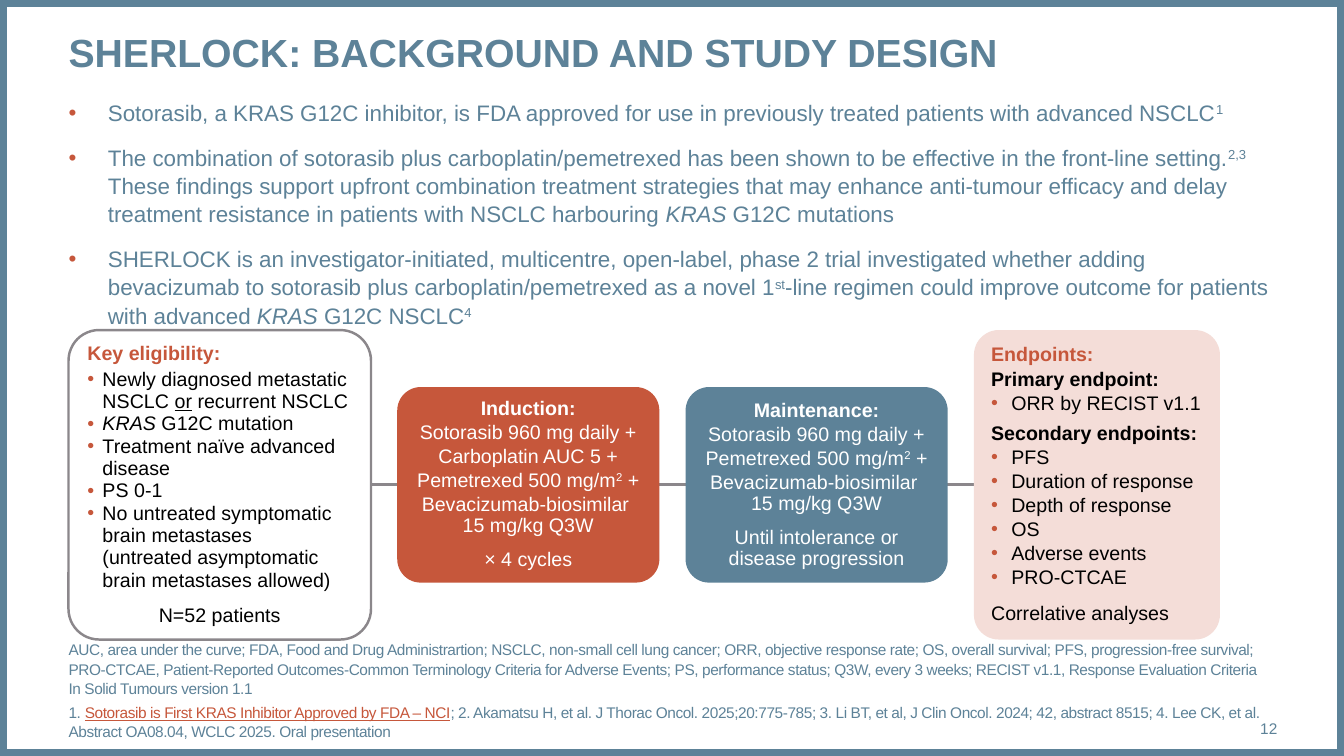
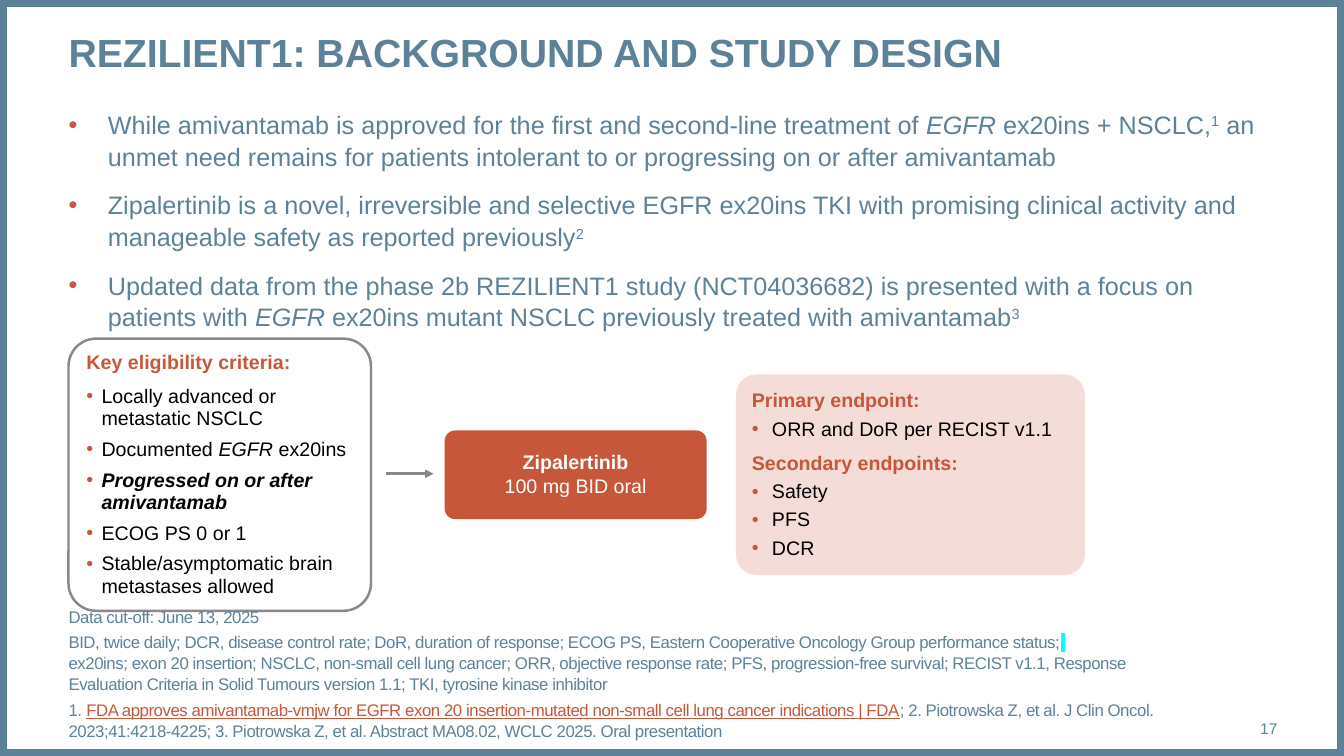
from dataclasses import dataclass, replace

from lxml.etree import SubElement
from pptx import Presentation
from pptx.dml.color import RGBColor
from pptx.enum.shapes import MSO_CONNECTOR, MSO_SHAPE
from pptx.enum.text import MSO_ANCHOR, MSO_AUTO_SIZE, PP_ALIGN
from pptx.oxml.ns import qn
from pptx.util import Inches, Pt


# Theme: colours, type sizes and common measures
@dataclass(frozen=True)
class Theme:
    font: str = "Arial"
    blue: str = "5D8298"
    rust: str = "C6573B"
    blush: str = "F4DDD8"
    grey: str = "8B878B"
    black: str = "000000"
    white: str = "FFFFFF"
    marker: str = "00FFFF"
    title_size: int = 28
    card_size: int = 14
    number_size: int = 11
    width: float = 13.33
    height: float = 7.5
    margin: float = 0.68
    content_width: float = 11.99


THEME = Theme()


@dataclass(frozen=True)
class ParaStyle:
    size: int = THEME.card_size
    color: str = THEME.black
    bold: bool = False
    bullet_indent: float = 0
    before: int = 0
    after: int = 0
    spacing: float = 0.9
    align: PP_ALIGN = PP_ALIGN.LEFT
    tracking: float = 0


# Paragraph styles
TITLE = ParaStyle(THEME.title_size, THEME.blue, bold=True, spacing=1)
NUMBER = ParaStyle(THEME.number_size, THEME.blue, spacing=1, align=PP_ALIGN.RIGHT)
BODY = ParaStyle(16, THEME.blue, bullet_indent=0.39, before=12, spacing=1.05)
NOTE = ParaStyle(11, THEME.blue, before=3, spacing=1.05, tracking=-0.3)

CRITERIA_HEAD = ParaStyle(color=THEME.rust, bold=True, after=2, spacing=0.95)
CRITERION = ParaStyle(bullet_indent=0.15, spacing=0.95)
PATIENTS = ParaStyle(before=9, spacing=0.95, align=PP_ALIGN.CENTER)

DOSE = ParaStyle(color=THEME.white, before=2, align=PP_ALIGN.CENTER)
DOSE_HEAD = replace(DOSE, bold=True)
DURATION = replace(DOSE, before=9)

ENDPOINT_HEAD = ParaStyle(color=THEME.rust, bold=True, after=3)
ENDPOINT_GROUP = ParaStyle(bold=True, before=3, after=2)
ENDPOINT = ParaStyle(bullet_indent=0.2, after=2)


# Spans: a plain string, or a (text, style name) pair
def superscript(text):
    return text, "superscript"


def italic(text):
    return text, "italic"


def link(text):
    return text, "link"


def rows(style, *lines):
    """Give every line the same paragraph style."""
    return [(style, *(line if isinstance(line, list) else [line])) for line in lines]


class StudyDeck:
    """Holds the theme and the current slide."""

    def __init__(self, theme):
        self.theme = theme
        self.deck = Presentation()
        self.deck.slide_width = Inches(theme.width)
        self.deck.slide_height = Inches(theme.height)
        self.slide = None

    def new_slide(self, title, number):
        theme = self.theme
        self.slide = self.deck.slides.add_slide(self.deck.slide_layouts[5])
        frame = self.shape(MSO_SHAPE.RECTANGLE, 0, 0, theme.width, theme.height)
        self.outline(frame, theme.blue, 10)

        heading = self.slide.shapes.title
        heading.left, heading.top = Inches(theme.margin), Inches(0.28)
        heading.width, heading.height = Inches(theme.content_width), Inches(0.94)
        self.fill_text(heading, rows(TITLE, title), MSO_ANCHOR.TOP, inset=False)
        self.text(11.81, 7.03, 0.86, 0.4, rows(NUMBER, number), MSO_ANCHOR.MIDDLE)

    def shape(self, kind, left, top, width, height, fill=None):
        shape = self.slide.shapes.add_shape(
            kind, Inches(left), Inches(top), Inches(width), Inches(height))
        shape.shadow.inherit = False
        shape.line.fill.background()
        if fill:
            shape.fill.solid()
            shape.fill.fore_color.rgb = RGBColor.from_string(fill)
        else:
            shape.fill.background()
        return shape

    def outline(self, shape, color, width):
        shape.line.color.rgb = RGBColor.from_string(color)
        shape.line.width = Pt(width)

    def card(self, left, middle, width, height, fill, paras, corner=0.101, line=None):
        """Rounded box centred vertically on the line of the study flow."""
        box = self.shape(MSO_SHAPE.ROUNDED_RECTANGLE, left, middle - height / 2,
                         width, height, fill)
        box.adjustments[0] = corner
        if line:
            self.outline(box, line, 1.75)
        self.fill_text(box, paras, MSO_ANCHOR.MIDDLE)

    def connector(self, start, end, middle, arrow=False):
        line = self.slide.shapes.add_connector(
            MSO_CONNECTOR.STRAIGHT, Inches(start), Inches(middle), Inches(end), Inches(middle))
        self.outline(line, self.theme.grey, 2)
        properties = line._element.find(qn("p:spPr"))
        if arrow:
            SubElement(properties.find(qn("a:ln")), qn("a:tailEnd"), type="triangle")
        SubElement(properties, qn("a:effectLst"))

    def text(self, left, top, width, height, paras, anchor=MSO_ANCHOR.TOP):
        box = self.slide.shapes.add_textbox(
            Inches(left), Inches(top), Inches(width), Inches(height))
        self.fill_text(box, paras, anchor, inset=False)

    def body(self, top, paras):
        self.text(self.theme.margin, top, self.theme.content_width, 2.2, paras)

    def footnotes(self, width, paras):
        self.text(self.theme.margin, 6.95, width, 0.4, paras, MSO_ANCHOR.BOTTOM)

    def fill_text(self, shape, paras, anchor, inset=True):
        frame = shape.text_frame
        frame.word_wrap = True
        frame.auto_size = MSO_AUTO_SIZE.NONE
        frame.vertical_anchor = anchor
        if not inset:
            frame.margin_left = frame.margin_right = 0
            frame.margin_top = frame.margin_bottom = 0
        for index, (style, *spans) in enumerate(paras):
            para = frame.add_paragraph() if index else frame.paragraphs[0]
            para.alignment = style.align
            para.line_spacing = style.spacing
            para.space_before = Pt(style.before if index else 0)
            para.space_after = Pt(style.after)
            if style.bullet_indent:
                self.bullet(para, style.bullet_indent)
            for span in spans:
                text, look = (span, "") if isinstance(span, str) else span
                self.span(para, text, look, style)

    def bullet(self, para, indent):
        properties = para._p.get_or_add_pPr()
        properties.set("marL", str(Inches(indent)))
        properties.set("indent", str(-Inches(indent)))
        color = SubElement(properties, qn("a:buClr"))
        SubElement(color, qn("a:srgbClr"), val=self.theme.rust)
        SubElement(properties, qn("a:buFont"), typeface=self.theme.font)
        SubElement(properties, qn("a:buChar"), char="•")

    def span(self, para, text, look, style):
        for index, piece in enumerate(text.split("\n")):
            if index:
                para.add_line_break()
                line_break = para._p.findall(qn("a:br"))[-1]
                SubElement(line_break, qn("a:rPr"), sz=str(style.size * 100))
            if not piece:
                continue
            run = para.add_run()
            run.text = piece
            font = run.font
            font.name, font.size = self.theme.font, Pt(style.size)
            font.bold = style.bold or look == "strong"
            font.italic = look in ("italic", "strong")
            font.underline = look in ("underline", "link")
            color = self.theme.rust if look == "link" else style.color
            font.color.rgb = RGBColor.from_string(color)
            properties = run._r.get_or_add_rPr()
            if style.tracking:
                properties.set("spc", str(round(style.tracking * 100)))
            if look == "superscript":
                properties.set("baseline", "30000")
            if look == "marked":
                highlight = SubElement(properties, qn("a:highlight"))
                SubElement(highlight, qn("a:srgbClr"), val=self.theme.marker)
                properties.find(qn("a:solidFill")).addnext(highlight)


def sherlock_slide(study):
    theme = study.theme
    study.new_slide("SHERLOCK: BACKGROUND AND STUDY DESIGN", "12")
    study.body(0.97, rows(
        BODY,
        ["Sotorasib, a KRAS G12C inhibitor, is FDA approved for use in previously treated "
         "patients with advanced NSCLC", superscript("1")],
        ["The combination of sotorasib plus carboplatin/pemetrexed has been shown to be "
         "effective in the front-line setting.", superscript("2,3"),
         " These findings support upfront combination treatment strategies that may enhance "
         "anti-tumour efficacy and delay treatment resistance in patients with NSCLC harbouring ",
         italic("KRAS"), " G12C mutations"],
        ["SHERLOCK is an investigator-initiated, multicentre, open-label, phase 2 trial "
         "investigated whether adding bevacizumab to sotorasib plus carboplatin/pemetrexed as "
         "a novel 1", superscript("st"), "-line regimen could improve outcome for patients "
         "with advanced ", italic("KRAS"), " G12C NSCLC", superscript("4")]))

    # Study flow: four cards on one line
    sotorasib = "Sotorasib 960 mg daily +"
    pemetrexed = ["Pemetrexed 500 mg/m", superscript("2"), " +"]
    bevacizumab = "Bevacizumab-biosimilar \n15 mg/kg Q3W"
    eligibility = rows(CRITERIA_HEAD, "Key eligibility:") + rows(
        CRITERION,
        ["Newly diagnosed metastatic NSCLC ", ("or", "underline"), " recurrent NSCLC"],
        [italic("KRAS "), "G12C mutation"],
        "Treatment naïve advanced disease",
        "PS 0-1",
        "No untreated symptomatic brain metastases \n"
        "(untreated asymptomatic brain metastases allowed)",
    ) + rows(PATIENTS, "N=52 patients")
    induction = (rows(DOSE_HEAD, "Induction:")
                 + rows(DOSE, sotorasib, "Carboplatin AUC 5 +", pemetrexed, bevacizumab)
                 + rows(DURATION, "× 4 cycles"))
    maintenance = (rows(DOSE_HEAD, "Maintenance:")
                   + rows(DOSE, sotorasib, pemetrexed, bevacizumab)
                   + rows(DURATION, "Until intolerance or\ndisease progression"))
    endpoints = (rows(ENDPOINT_HEAD, "Endpoints:")
                 + rows(replace(ENDPOINT_GROUP, before=0), "Primary endpoint:")
                 + rows(replace(ENDPOINT, after=3), "ORR by RECIST v1.1")
                 + rows(ENDPOINT_GROUP, "Secondary endpoints:")
                 + rows(ENDPOINT, "PFS", "Duration of response", "Depth of response", "OS",
                        "Adverse events", "PRO-CTCAE")
                 + rows(ParaStyle(before=9, after=2), "Correlative analyses"))

    middle, gap, left = 4.81, 0.26, theme.margin
    study.connector(3.2, 10.26, middle)
    for width, height, fill, paras, corner, line in (
            (3, 3.07, theme.white, eligibility, 0.101, theme.grey),
            (2.6, 1.94, theme.rust, induction, 0.12, None),
            (2.6, 1.94, theme.blue, maintenance, 0.12, None),
            (2.44, 3.07, theme.blush, endpoints, 0.101, None)):
        study.card(left, middle, width, height, fill, paras, corner, line)
        left += width + gap

    study.footnotes(11.82, rows(
        NOTE,
        "AUC, area under the curve; FDA, Food and Drug Administrartion; NSCLC, non-small cell "
        "lung cancer; ORR, objective response rate; OS, overall survival; PFS, "
        "progression-free survival; PRO-CTCAE, Patient-Reported Outcomes-Common Terminology "
        "Criteria for Adverse Events; PS, performance status; Q3W, every 3 weeks; RECIST v1.1, "
        "Response Evaluation Criteria In Solid Tumours version 1.1",
        ["1. ", link("Sotorasib is First KRAS Inhibitor Approved by FDA – NCI"),
         "; 2. Akamatsu H, et al. J Thorac Oncol. 2025;20:775-785; 3. Li BT, et al, J Clin "
         "Oncol. 2024; 42, abstract 8515; 4. Lee CK, et al. Abstract OA08.04, WCLC 2025. "
         "Oral presentation"]))


def rezilient_slide(study):
    theme = study.theme
    study.new_slide("REZILIENT1: BACKGROUND AND STUDY DESIGN", "17")
    study.body(1.07, rows(
        replace(BODY, size=18),
        ["While amivantamab is approved for the first and second-line treatment of ",
         italic("EGFR"), " ex20ins + NSCLC,", superscript("1"), " an unmet need remains for "
         "patients intolerant to or progressing on or after amivantamab"],
        ["Zipalertinib is a novel, irreversible and selective EGFR ex20ins TKI with promising "
         "clinical activity and manageable safety as reported previously", superscript("2")],
        ["Updated data from the phase 2b REZILIENT1 study (NCT04036682) is presented with a "
         "focus on patients with ", italic("EGFR"),
         " ex20ins mutant NSCLC previously treated with amivantamab", superscript("3")]))

    # Study flow: eligibility, treatment, endpoints
    middle = 4.71
    study.connector(3.83, 4.3, 4.7, arrow=True)
    study.card(theme.margin, middle, 3, 2.7, theme.white, rows(
        CRITERIA_HEAD, "Key eligibility criteria:") + rows(
        replace(CRITERION, before=6),
        "Locally advanced or metastatic NSCLC",
        ["Documented ", italic("EGFR"), " ex20ins"],
        [("Progressed on or after amivantamab", "strong")],
        "ECOG PS 0 or 1",
        "Stable/asymptomatic brain metastases allowed"), line=theme.grey)
    study.card(4.41, middle, 2.6, 0.88, theme.rust,
               rows(DOSE_HEAD, "Zipalertinib") + rows(DOSE, "100 mg BID oral"), corner=0.12)
    outcome = replace(ENDPOINT, before=3)
    study.card(7.3, middle, 3.46, 1.99, theme.blush,
               rows(ENDPOINT_HEAD, "Primary endpoint:")
               + rows(replace(outcome, after=3), "ORR and DoR per RECIST v1.1")
               + rows(replace(ENDPOINT_HEAD, before=6, after=2), "Secondary endpoints:")
               + rows(outcome, "Safety", "PFS", "DCR"))

    study.footnotes(11.13, rows(
        replace(NOTE, size=12),
        "Data cut-off: June 13, 2025",
        ["BID, twice daily; DCR, disease control rate; DoR, duration of response; ECOG PS, "
         "Eastern Cooperative Oncology Group performance status;", (" \n", "marked"),
         "ex20ins; exon 20 insertion; NSCLC, non-small cell lung cancer; ORR, objective "
         "response rate; PFS, progression-free survival; RECIST v1.1, Response Evaluation "
         "Criteria in Solid Tumours version 1.1; TKI, tyrosine kinase inhibitor"],
        ["1. ", link("FDA approves amivantamab-vmjw for EGFR exon 20 insertion-mutated "
                     "non-small cell lung cancer indications | FDA"),
         "; 2. Piotrowska Z, et al. J Clin Oncol. 2023;41:4218-4225; 3. Piotrowska Z, et al. "
         "Abstract MA08.02, WCLC 2025. Oral presentation"]))


def main():
    study = StudyDeck(THEME)
    sherlock_slide(study)
    rezilient_slide(study)
    study.deck.save("out.pptx")


if __name__ == "__main__":
    main()
